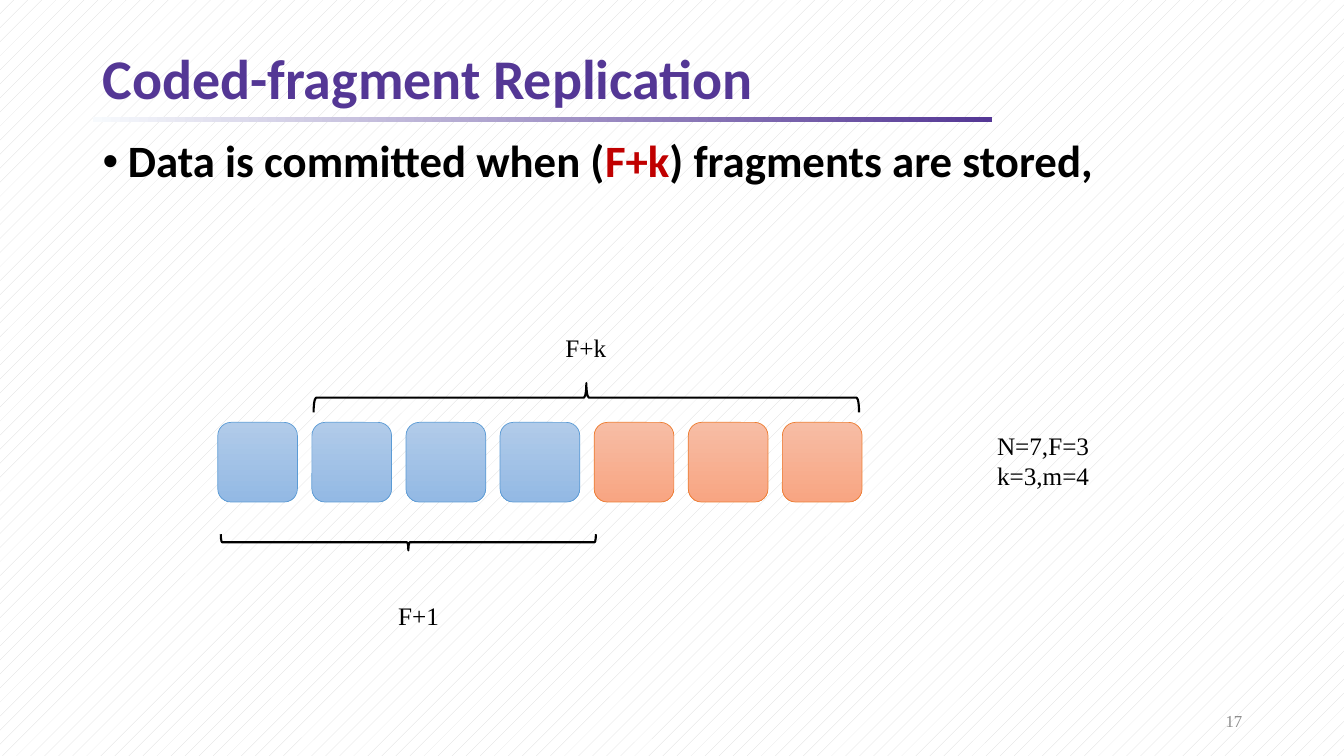
from lxml import etree
from pptx import Presentation
from pptx.dml.color import RGBColor
from pptx.enum.dml import MSO_PATTERN
from pptx.enum.shapes import MSO_SHAPE
from pptx.enum.text import MSO_ANCHOR, MSO_AUTO_SIZE, PP_ALIGN
from pptx.oxml.ns import qn
from pptx.util import Inches, Pt

# Content
TITLE = "Coded-fragment Replication"
BULLET = [("Data is committed when (", "000000"), ("F+k", "C00000"),
          (") fragments are stored,", "000000")]
BLUE = ("B1CBE9", "93B9E4", "5B9BD5")  # gradient start, gradient end, outline
ORANGE = ("F7BDA5", "F8A582", "ED7D31")
FRAGMENTS = [BLUE] * 4 + [ORANGE] * 3
FIRST_LEFT, LAST_LEFT, FRAGMENT_TOP, FRAGMENT_SIZE = 2.16, 7.76, 4.19, 0.79
BRACES = [  # left, top, width, height before turning, rotation
    (5.67, 1.24, 0.29, 5.41, 90),
    (3.97, 3.52, 0.16, 3.72, 270),
]
LABELS = [  # left, top, width, height, lines
    (3.85, 5.91, 0.61, 0.4, ["F+1"]),
    (5.51, 3.25, 0.61, 0.4, ["F+k"]),
    (9.79, 4.22, 1.12, 0.71, ["N=7,F=3", "k=3,m=4"]),
]
HEADING = {"name": "Calibri", "size": Pt(40), "bold": True}
BODY = {"name": "Calibri", "size": Pt(32), "bold": True}
LABEL = {"name": "Times New Roman", "size": Pt(18)}
FOOTER = {"name": "Times New Roman", "size": Pt(12)}


def rgb(color):
    return RGBColor.from_string(color)


def add_run(p, text, style, color):
    r = p.add_run()
    r.text = text
    for name, value in style.items():
        setattr(r.font, name, value)
    r.font.color.rgb = rgb(color)


def add_text_box(left, top, width, height, wrap=True):
    box = s.shapes.add_textbox(*map(Inches, (left, top, width, height)))
    box.text_frame.word_wrap = wrap
    return box.text_frame


def add_shape(kind, left, top, width, height):
    sp = s.shapes.add_shape(kind, *map(Inches, (left, top, width, height)))
    sp.shadow.inherit = False
    return sp


def fill_gradient(sp, start, end, angle):
    sp.fill.gradient()
    sp.fill.gradient_angle = angle
    for stop, color in zip(sp.fill.gradient_stops, (start, end)):
        stop.color.rgb = rgb(color)


def set_line(sp, color, width):
    sp.line.color.rgb = rgb(color)
    sp.line.width = Pt(width)


prs = Presentation()
prs.slide_width, prs.slide_height = Inches(13.33), Inches(7.5)
s = prs.slides.add_slide(prs.slide_layouts[5])

# Patterned background
bg = s.background.fill
bg.patterned()
bg.pattern = MSO_PATTERN.PERCENT_5
bg.fore_color.rgb, bg.back_color.rgb = rgb("D9D9D9"), rgb("FFFFFF")

# Title and the rule under it
title = s.shapes.title
title.left, title.top = Inches(0.92), Inches(0.43)
title.width, title.height = Inches(11.5), Inches(0.75)
tf = title.text_frame
tf.vertical_anchor, tf.auto_size = MSO_ANCHOR.MIDDLE, MSO_AUTO_SIZE.NONE
p = tf.paragraphs[0]
p.alignment, p.line_spacing = PP_ALIGN.LEFT, 0.9
add_run(p, TITLE, HEADING, "543795")

rule = add_shape(MSO_SHAPE.RECTANGLE, 0.92, 1.16, 8.92, 0.05)
fill_gradient(rule, "F7FAFD", "543795", 0)
rule.line.fill.background()

# Bullet
p = add_text_box(0.92, 1.33, 11.5, 5.43).paragraphs[0]
pPr = p._p.get_or_add_pPr()
pPr.set("marL", str(Inches(0.25)))
pPr.set("indent", str(Inches(-0.25)))
etree.SubElement(pPr, qn("a:buFont")).set("typeface", "Arial")
etree.SubElement(pPr, qn("a:buChar")).set("char", "•")
p.line_spacing = 0.9
for text, color in BULLET:
    add_run(p, text, BODY, color)

# Row of fragments
pitch = (LAST_LEFT - FIRST_LEFT) / (len(FRAGMENTS) - 1)
for i, (start, end, outline) in enumerate(FRAGMENTS):
    sp = add_shape(MSO_SHAPE.ROUNDED_RECTANGLE, FIRST_LEFT + i * pitch,
                   FRAGMENT_TOP, FRAGMENT_SIZE, FRAGMENT_SIZE)
    fill_gradient(sp, start, end, 270)
    set_line(sp, outline, 0.5)

# Braces over and under the row
for *box, rotation in BRACES:
    sp = add_shape(MSO_SHAPE.LEFT_BRACE, *box)
    sp.rotation = rotation
    sp.fill.background()
    set_line(sp, "000000", 1.5)

# Labels
for *box, lines in LABELS:
    tf = add_text_box(*box, wrap=False)
    tf.auto_size = MSO_AUTO_SIZE.SHAPE_TO_FIT_TEXT
    for i, line in enumerate(lines):
        p = tf.add_paragraph() if i else tf.paragraphs[0]
        add_run(p, line, LABEL, "000000")

# Slide number
tf = add_text_box(9.42, 6.95, 3, 0.4)
tf.vertical_anchor = MSO_ANCHOR.MIDDLE
p = tf.paragraphs[0]
p.alignment = PP_ALIGN.RIGHT
add_run(p, "17", FOOTER, "8C8C8C")

prs.save("out.pptx")
